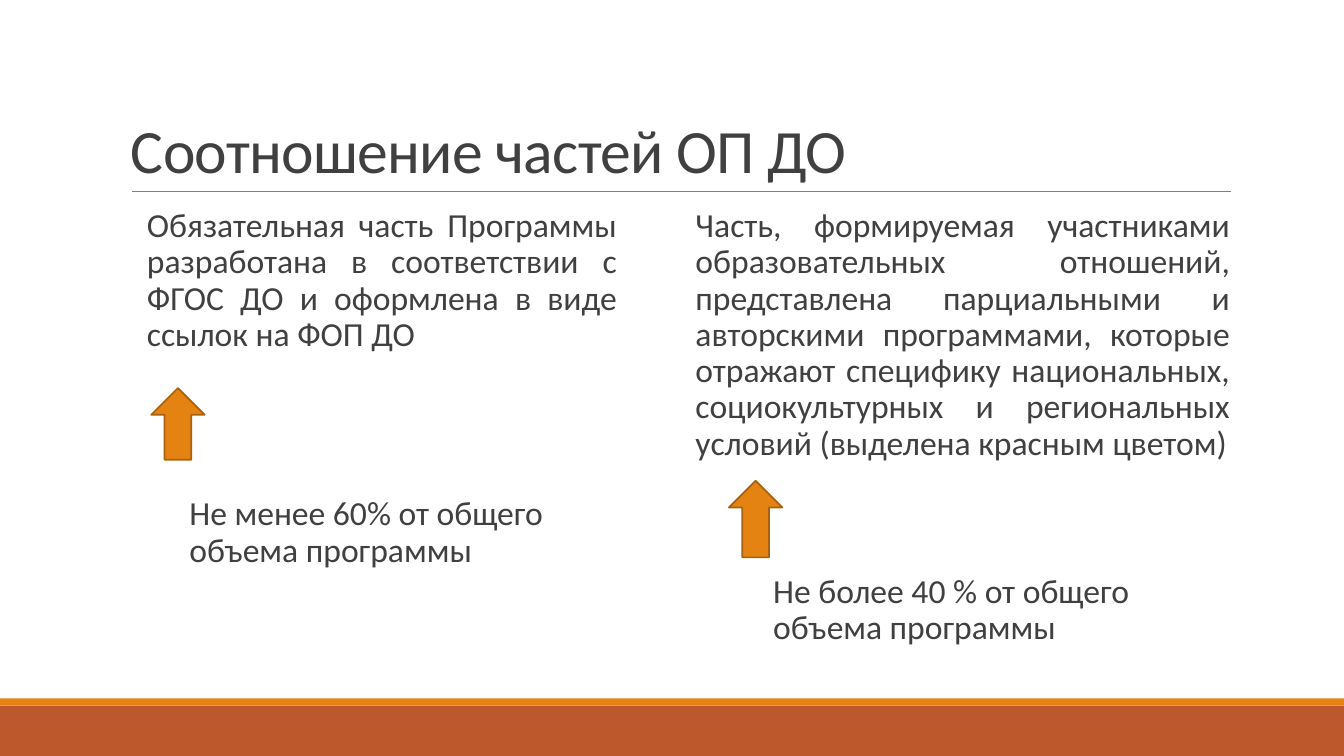
from dataclasses import dataclass

from lxml import etree
from pptx import Presentation
from pptx.dml.color import RGBColor
from pptx.enum import shapes, text
from pptx.oxml.ns import qn
from pptx.util import Inches, Pt


@dataclass(frozen=True)
class Theme:
    font: str = "Calibri"
    ink: RGBColor = RGBColor(0x40, 0x40, 0x40)
    rule: RGBColor = RGBColor(0x80, 0x80, 0x80)
    orange: RGBColor = RGBColor(0xE4, 0x83, 0x12)
    outline: RGBColor = RGBColor(0xA9, 0x61, 0x0D)
    rust: RGBColor = RGBColor(0xBD, 0x58, 0x2C)
    title_size: Pt = Pt(44)
    body_size: Pt = Pt(24)


THEME = Theme()
BLANK_LAYOUT = 6
MANDATORY = (
    "Обязательная часть Программы разработана в соответствии с ФГОС ДО "
    "и оформлена в виде ссылок на ФОП ДО"
)
PARTICIPANTS = (
    "Часть, формируемая участниками образовательных отношений, представлена "
    "парциальными и авторскими программами, которые отражают специфику "
    "национальных, социокультурных и региональных условий "
    "(выделена красным цветом)"
)


def box(left, top, width, height):
    return [Inches(value) for value in (left, top, width, height)]


def add_filled_shape(slide, kind, place, fill, line=None):
    shape = slide.shapes.add_shape(kind, *box(*place))
    shape.shadow.inherit = False
    shape.fill.solid()
    shape.fill.fore_color.rgb = fill
    if line is None:
        shape.line.fill.background()
    else:
        shape.line.color.rgb = line
        shape.line.width = Pt(1.25)


def add_rule(slide, left, right, y):
    rule = slide.shapes.add_connector(
        shapes.MSO_CONNECTOR.STRAIGHT, Inches(left), Inches(y), Inches(right), Inches(y)
    )
    rule.line.color.rgb = THEME.rule
    rule.line.width = Pt(0.5)
    etree.SubElement(rule._element.spPr, qn("a:effectLst"))


def add_text(slide, place, words, size, line_spacing):
    """Add a one-paragraph text box and return its frame for further formatting."""
    frame = slide.shapes.add_textbox(*box(*place)).text_frame
    frame.word_wrap = True
    frame.text = words
    paragraph = frame.paragraphs[0]
    paragraph.line_spacing = line_spacing
    font = paragraph.runs[0].font
    font.name, font.size, font.color.rgb = THEME.font, size, THEME.ink
    return frame


def add_title(slide, words):
    frame = add_text(slide, (1.2, 0.31, 11, 1.59), words, THEME.title_size, 0.85)
    frame.vertical_anchor = text.MSO_ANCHOR.BOTTOM
    frame.paragraphs[0].runs[0].font._element.set("spc", "-50")


def add_body(slide, place, words, justified=False):
    frame = add_text(slide, place, words, THEME.body_size, 0.9)
    frame.margin_left, frame.margin_right = Inches(0.1), 0
    paragraph = frame.paragraphs[0]
    paragraph.space_before, paragraph.space_after = Pt(12), Pt(2)
    if justified:
        paragraph.alignment = text.PP_ALIGN.JUSTIFY


def add_up_arrow(slide, left, top, height):
    add_filled_shape(
        slide, shapes.MSO_SHAPE.UP_ARROW, (left, top, 0.53, height),
        THEME.orange, THEME.outline,
    )


def main():
    presentation = Presentation()
    presentation.slide_width, presentation.slide_height = Inches(13.33), Inches(7.5)
    slide = presentation.slides.add_slide(presentation.slide_layouts[BLANK_LAYOUT])

    for top, height, fill in ((7, 0.5, THEME.rust), (6.93, 0.07, THEME.orange)):
        add_filled_shape(
            slide, shapes.MSO_SHAPE.RECTANGLE, (0, top, 13.33, height), fill
        )
    add_rule(slide, 1.31, 12.21, 1.9)
    add_title(slide, "Соотношение частей ОП ДО")

    add_body(slide, (1.36, 2.02, 4.76, 1.83), MANDATORY, justified=True)
    add_up_arrow(slide, 1.5, 3.85, 0.71)
    add_body(slide, (1.78, 4.88, 4.17, 0.95), "Не менее 60% от общего объема программы")

    add_body(slide, (6.8, 2.02, 5.4, 2.63), PARTICIPANTS, justified=True)
    add_up_arrow(slide, 7.23, 4.77, 0.76)
    add_body(slide, (7.57, 5.65, 4.17, 0.94), "Не более 40 % от общего объема программы")

    presentation.save("out.pptx")


if __name__ == "__main__":
    main()
